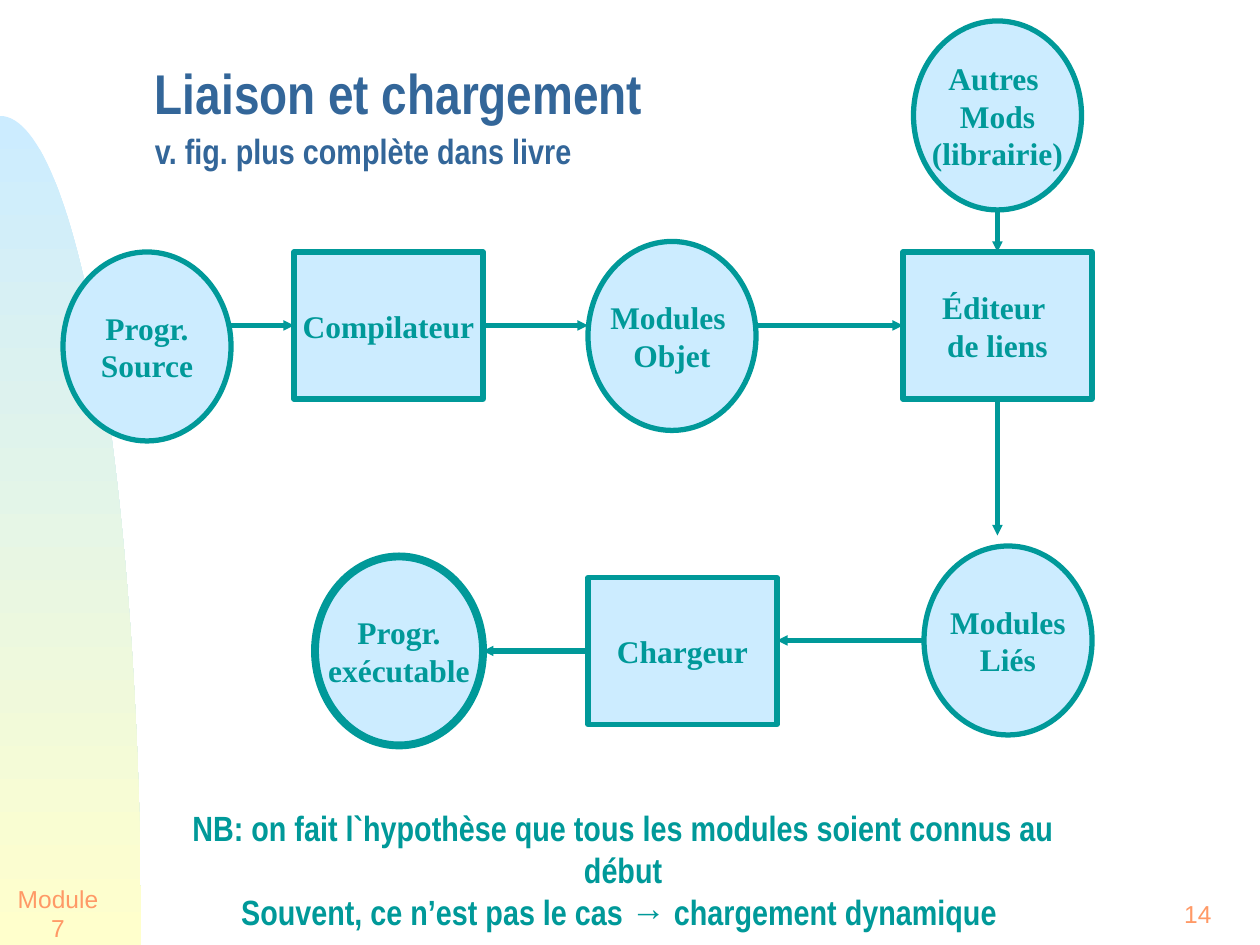
import math
import pptx
import pptx.util
import pptx.dml.color
import pptx.enum.shapes
import pptx.enum.text
import pptx.oxml.ns
from lxml import etree

Pt = pptx.util.Pt
Inches = pptx.util.Inches
qn = pptx.oxml.ns.qn
SHAPE = pptx.enum.shapes.MSO_SHAPE
ANCHOR = pptx.enum.text.MSO_ANCHOR
ALIGN = pptx.enum.text.PP_ALIGN

COLORS = {"teal": "009999", "sky": "CCECFF", "sand": "FFFFCC",
          "title": "336699", "footer": "FF9966"}

# Content: the diagram lies on a grid of 120 columns by 90 rows
TITLE = "Liaison et chargement"
SUBTITLE = "v. fig. plus complète dans livre"
NOTES = ["NB: on fait l`hypothèse que tous les modules soient connus au début",
         "Souvent, ce n’est pas le cas → chargement dynamique "]
FOOTERS = [("Module 7", 0, 0.92, ALIGN.CENTER), ("14", 9.3, 0.7, ALIGN.LEFT)]
SIZES = {"data": (SHAPE.OVAL, 16, 18), "tool": (SHAPE.RECTANGLE, 18, 14)}
NODES = [  # kind, column, row, outline, lines
    ("data", 30, 53, 4.5, ["Progr.", "exécutable"]),
    ("tool", 28, 24, 3, ["Compilateur"]),
    ("data", 56, 23, 3, ["Modules ", "Objet"]),
    ("tool", 86, 24, 3, ["Éditeur ", "de liens"]),
    ("data", 88, 52, 3, ["Modules", "Liés"]),
    ("tool", 56, 55, 3, ["Chargeur"]),
    ("data", 87, 2, 3, ["Autres ", "Mods", "(librairie)"]),
    ("data", 6, 24, 3, ["Progr.", "Source"]),
]
ARROWS = [  # from column, row, to column, row
    (20, 31, 28, 31), (46, 31, 56, 31), (72, 31, 86, 31),
    (95, 20, 95, 24), (95, 38, 95, 51),
    (88, 61, 74, 61), (56, 62, 46, 62),
]

prs = pptx.Presentation()
prs.slide_width, prs.slide_height = Inches(10), Inches(7.5)
slide = prs.slides.add_slide(prs.slide_layouts[5])
shapes = slide.shapes
UNIT = prs.slide_width / 120


def rgb(name):
    return pptx.dml.color.RGBColor.from_string(COLORS[name])


def grid(*values):
    return [round(v * UNIT) for v in values]


def write(p, text, size=18, font="Times New Roman", color="teal", bold=True):
    r = p.add_run()
    r.text = text
    r.font.size, r.font.name, r.font.bold = Pt(size), font, bold
    r.font.color.rgb = rgb(color)


def fill_frame(sp, lines, align=ALIGN.CENTER, anchor=ANCHOR.MIDDLE, wrap=False, **style):
    tf = sp.text_frame
    tf.word_wrap, tf.vertical_anchor = wrap, anchor
    for i, line in enumerate(lines):
        p = tf.add_paragraph() if i else tf.paragraphs[0]
        p.alignment = align
        write(p, line, **style)


# Title with its smaller second line
sp = shapes.title
sp.left, sp.top, sp.width, sp.height = map(Inches, (1.13, 0.36, 8.62, 1.05))
fill_frame(sp, [TITLE], align=ALIGN.LEFT, wrap=True,
           size=32, font="Arial Narrow", color="title")
sp.text_frame.auto_size = pptx.enum.text.MSO_AUTO_SIZE.NONE
p = sp.text_frame.paragraphs[0]
p.line_spacing = 1.1
p.add_line_break()
etree.SubElement(p._p[-1], qn("a:rPr"), sz="3200")
write(p, SUBTITLE, size=20, font="Arial Narrow", color="title")

# Quarter ellipse in the lower left corner
RX, RY, STEPS = 1.12, 6.58, 60
angles = [math.pi / 2 * i / STEPS for i in range(STEPS + 1)]
curve = [(Inches(RX * math.sin(a)), Inches(7.5 - RY * math.cos(a))) for a in angles]
builder = shapes.build_freeform(*curve[0])
builder.add_line_segments(curve[1:] + [(0, Inches(7.5))], close=True)
sp = builder.convert_to_shape()
sp.shadow.inherit = False
sp.line.fill.background()
sp.fill.gradient()
sp.fill.gradient_angle = 270
for stop, position, name in zip(sp.fill.gradient_stops, (0, 1), ("sky", "sand")):
    stop.position, stop.color.rgb = position, rgb(name)

# Footer and slide number
for text, left, width, align in FOOTERS:
    sp = shapes.add_textbox(*map(Inches, (left, 7, width, 0.5)))
    fill_frame(sp, [text], align=align, size=14, font="Arial",
               color="footer", bold=False)

# Arrows, below the nodes
for arrow in ARROWS:
    line = shapes.add_connector(pptx.enum.shapes.MSO_CONNECTOR.STRAIGHT, *grid(*arrow))
    line.line.width, line.line.color.rgb = Pt(3), rgb("teal")
    etree.SubElement(line.line._get_or_add_ln(), qn("a:tailEnd"),
                     type="triangle", w="sm", len="sm")
    etree.SubElement(line._element.spPr, qn("a:effectLst"))

# Nodes
for kind, column, row, outline, lines in NODES:
    preset, width, height = SIZES[kind]
    sp = shapes.add_shape(preset, *grid(column, row, width, height))
    sp.shadow.inherit = False
    sp.fill.solid()
    sp.fill.fore_color.rgb = rgb("sky")
    sp.line.width, sp.line.color.rgb = Pt(outline), rgb("teal")
    fill_frame(sp, lines)

# Closing remark
sp = shapes.add_textbox(*map(Inches, (1.1, 6.35, 7.69, 0.77)))
fill_frame(sp, NOTES, anchor=ANCHOR.TOP, wrap=True, size=20, font="Arial Narrow")

prs.save("out.pptx")
